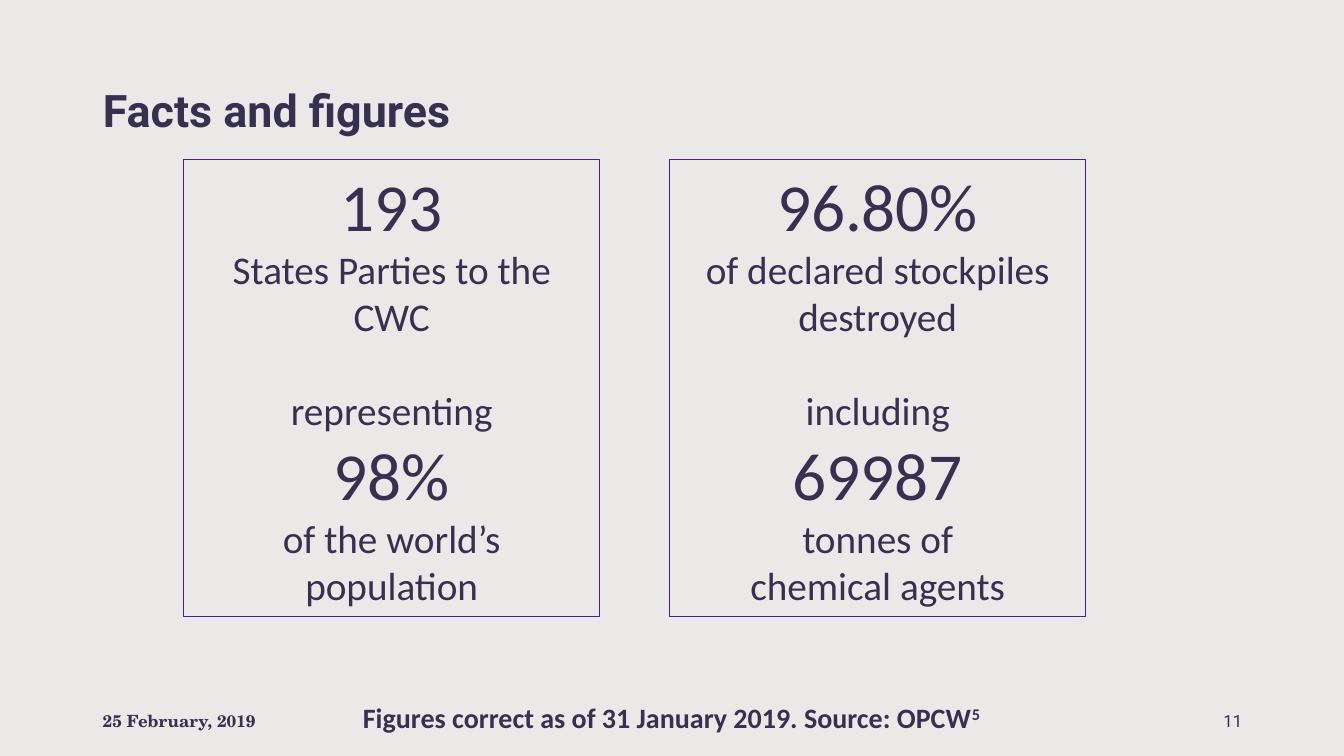
from pptx import Presentation
from pptx.dml.color import RGBColor
from pptx.enum.shapes import MSO_SHAPE as Shape
from pptx.enum.text import MSO_ANCHOR as Anchor, MSO_AUTO_SIZE as AutoSize, PP_ALIGN as Align
from pptx.util import Inches, Pt

PAPER = RGBColor(0xEB, 0xE9, 0xE8)
INK = RGBColor(0x37, 0x31, 0x51)
FIGURE_INK = RGBColor(0x37, 0x30, 0x51)
PURPLE = RGBColor(0x47, 0x21, 0x86)

BIG, SMALL = 48, 28
GAP = 34  # one line of small text, in points


def write(para, text, *, size, font, color=INK, bold=False, align=Align.LEFT,
          before=0, raised=False):
    """Add a formatted run to a paragraph."""
    para.alignment = align
    para.space_before = Pt(before)
    span = para.add_run()
    span.text = text
    span.font.size = Pt(size)
    span.font.name = font
    span.font.bold = bold
    span.font.color.rgb = color
    if raised:
        span._r.get_or_add_rPr().set("baseline", "30000")


class FactPage:
    """Style and elements of the facts slide."""

    def __init__(self, deck):
        self.page = deck.slides.add_slide(deck.slide_layouts[5])
        fill = self.page.background.fill
        fill.solid()
        fill.fore_color.rgb = PAPER

    def title(self, text, left, top, width, height):
        box = self.page.shapes.title
        box.left, box.top = Inches(left), Inches(top)
        box.width, box.height = Inches(width), Inches(height)
        frame = box.text_frame
        frame.auto_size = AutoSize.NONE
        frame.vertical_anchor = Anchor.MIDDLE
        para = frame.paragraphs[0]
        para.line_spacing = 0.9
        write(para, text, size=32, font="Roboto", bold=True)

    def label(self, text, left, top, width, **style):
        box = self.page.shapes.add_textbox(
            Inches(left), Inches(top), Inches(width), Inches(0.4))
        frame = box.text_frame
        frame.word_wrap = True
        frame.vertical_anchor = Anchor.MIDDLE
        para = frame.paragraphs[0]
        write(para, text, **style)
        return para

    def fact_box(self, left, lines):
        box = self.page.shapes.add_shape(
            Shape.RECTANGLE, Inches(left), Inches(1.58), Inches(4.13), Inches(4.54))
        box.shadow.inherit = False
        box.fill.background()
        box.line.color.rgb = PURPLE
        box.line.width = Pt(0.75)
        frame = box.text_frame
        frame.word_wrap = True
        frame.auto_size = AutoSize.SHAPE_TO_FIT_TEXT
        frame.vertical_anchor = Anchor.TOP
        for index, (text, size, before) in enumerate(lines):
            para = frame.add_paragraph() if index else frame.paragraphs[0]
            write(para, text, size=size, font="Calibri", color=FIGURE_INK,
                  align=Align.CENTER, before=before)


def main():
    deck = Presentation()
    deck.slide_width, deck.slide_height = Inches(13.33), Inches(7.5)
    facts = FactPage(deck)

    # Title
    facts.title("Facts and figures", 0.92, 0.4, 11.5, 1.45)

    # Date and page number
    facts.label("25 February, 2019", 0.92, 6.95, 3,
                size=12, font="TeX Gyre Schola", bold=True)
    facts.label("11", 9.42, 6.95, 3, size=12, font="Roboto", align=Align.RIGHT)

    # Membership and stockpiles
    facts.fact_box(1.82, [
        ("193", BIG, 0),
        ("States Parties to the CWC", SMALL, 0),
        ("representing", SMALL, GAP),
        ("98%", BIG, 0),
        ("of the world’s population", SMALL, 0),
    ])
    facts.fact_box(6.64, [
        ("96.80%", BIG, 0),
        ("of declared stockpiles destroyed", SMALL, 0),
        ("including", SMALL, GAP),
        ("69987", BIG, 0),
        ("tonnes of", SMALL, 0),
        ("chemical agents", SMALL, 0),
    ])

    # Source line with its reference mark
    source_style = dict(size=20, font="Calibri", bold=True)
    source = facts.label("Figures correct as of 31 January 2019. Source: OPCW",
                         3.5, 6.92, 6.59, **source_style)
    write(source, "5", raised=True, **source_style)

    deck.save("out.pptx")


if __name__ == "__main__":
    main()
